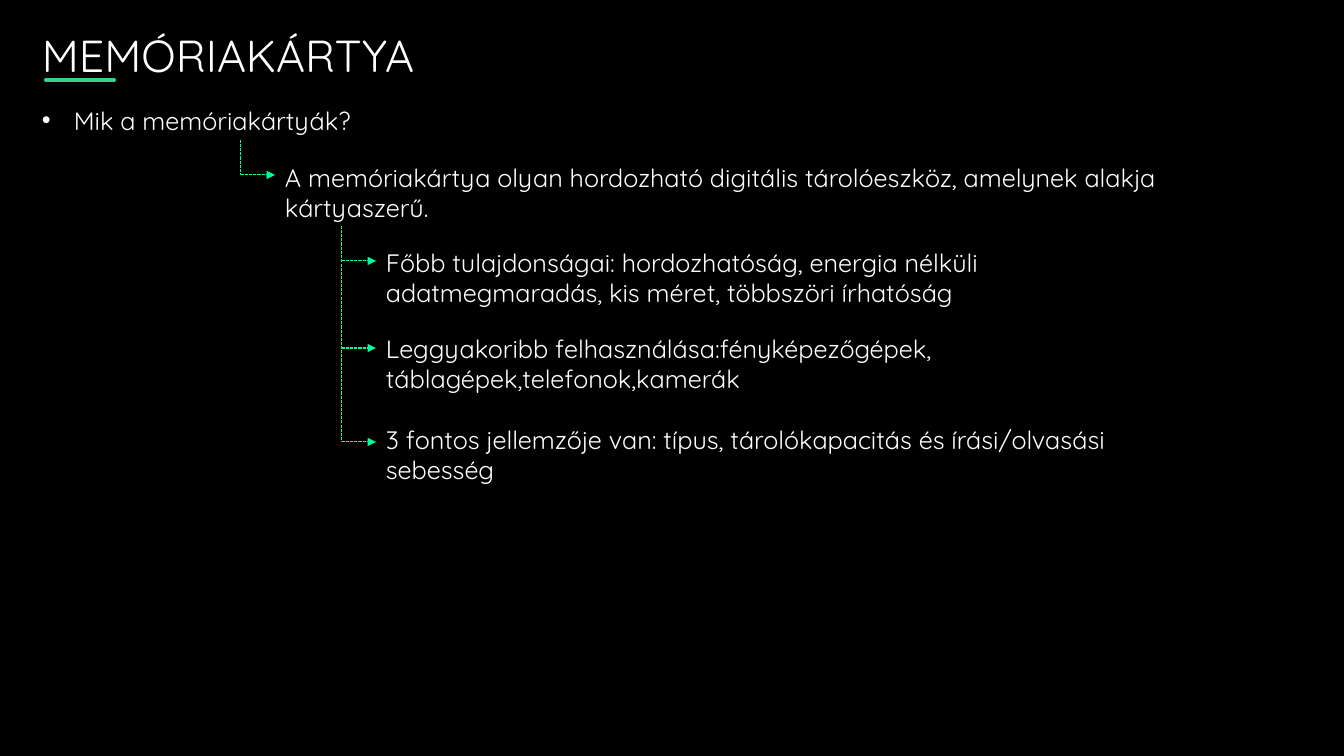
from dataclasses import dataclass

from pptx import Presentation
from pptx.dml.color import RGBColor as RGB
from pptx.enum.dml import MSO_LINE_DASH_STYLE as Dash
from pptx.enum.shapes import MSO_CONNECTOR as Connector
from pptx.enum.text import MSO_ANCHOR as Anchor, MSO_AUTO_SIZE as AutoSize
from pptx.oxml.ns import qn
from pptx.oxml.xmlchemy import OxmlElement as Element
from pptx.util import Pt

SLIDE_WIDTH, SLIDE_HEIGHT = 1344, 756
SCALE = 12192000 / SLIDE_WIDTH
ARROW_LENGTH = 34


@dataclass(frozen=True)
class Theme:
    """Colours, font and type sizes of the slide."""
    background: RGB = RGB(0, 0, 0)
    text: RGB = RGB(255, 255, 255)
    title_fade: RGB = RGB(0xA6, 0xA6, 0xA6)
    underline: RGB = RGB(0x37, 0xD1, 0x8B)
    branch: RGB = RGB(0x00, 0xFF, 0x99)
    font: str = "Quicksand"
    title_size: int = 32
    body_size: int = 18


THEME = Theme()


def px(length):
    """Turn a length in px into EMU."""
    return round(length * SCALE)


def add_text(slide, text, left, top, width, height, size=THEME.body_size,
             anchor=Anchor.TOP, fit=True, fade=None, bullet_indent=0):
    """Add a wrapped text box in the slide's font."""
    box = slide.shapes.add_textbox(px(left), px(top), px(width), px(height))
    frame = box.text_frame
    frame.word_wrap = True
    frame.auto_size = AutoSize.SHAPE_TO_FIT_TEXT if fit else AutoSize.NONE
    frame.vertical_anchor = anchor
    paragraph = frame.paragraphs[0]
    run = paragraph.add_run()
    run.text = text
    run.font.name = THEME.font
    run.font.size = Pt(size)
    if fade:
        run.font.fill.gradient()
        run.font.fill.gradient_angle = 267
        for stop, color in zip(run.font.fill.gradient_stops, (THEME.text, fade)):
            stop.color.rgb = color
    else:
        run.font.color.rgb = THEME.text
    if bullet_indent:
        properties = paragraph._p.get_or_add_pPr()
        properties.set("marL", str(px(bullet_indent)))
        properties.set("indent", str(-px(bullet_indent)))
        bullet_font = Element("a:buFont")
        bullet_font.set("typeface", "Arial")
        bullet = Element("a:buChar")
        bullet.set("char", "•")
        properties.extend([bullet_font, bullet])


def add_line(shapes, start, end, color, width, dash=None, cap="flat", arrow=False):
    """Add a straight line, dashed or with an arrowhead if asked."""
    line = shapes.add_connector(Connector.STRAIGHT, *map(px, (*start, *end)))
    line.line.color.rgb = color
    line.line.width = Pt(width)
    if dash:
        line.line.dash_style = dash
    properties = line._element.spPr
    stroke = properties.find(qn("a:ln"))
    stroke.set("cap", cap)
    if arrow:
        head = Element("a:tailEnd")
        head.set("type", "triangle")
        stroke.append(head)
    properties.append(Element("a:effectLst"))


def add_branch(slide, left, top, bottom):
    """Add a dashed stem that turns right into an arrow."""
    branch = slide.shapes.add_group_shape().shapes
    corner = (left, bottom)
    style = {"color": THEME.branch, "width": 0.75, "dash": Dash.SQUARE_DOT}
    add_line(branch, corner, (left + ARROW_LENGTH, bottom), arrow=True, **style)
    add_line(branch, (left, top), corner, **style)


def add_branch_text(slide, text, left, stem_top, arrow_y, text_top, width):
    """Add a branch and the two-line text it points to."""
    add_branch(slide, left, stem_top, arrow_y)
    add_text(slide, text, left + ARROW_LENGTH, text_top, width, 72)


def main():
    """Build the memory card slide and save it."""
    deck = Presentation()
    deck.slide_width, deck.slide_height = px(SLIDE_WIDTH), px(SLIDE_HEIGHT)
    slide = deck.slides.add_slide(deck.slide_layouts[6])
    slide.background.fill.solid()
    slide.background.fill.fore_color.rgb = THEME.background

    add_text(slide, "MEMÓRIAKÁRTYA", 32, -50, 1092, 210, size=THEME.title_size,
             anchor=Anchor.MIDDLE, fit=False, fade=THEME.title_fade)
    add_line(slide.shapes, (46, 80), (114, 80), THEME.underline, 3, cap="rnd")
    add_text(slide, "Mik a memóriakártyák?", 32, 100, 362, 40, bullet_indent=32)

    add_branch_text(
        slide,
        "A memóriakártya olyan hordozható digitális tárolóeszköz, "
        "amelynek alakja kártyaszerű.",
        241, 140, 175, 157, 1028)
    details = [
        ("Főbb tulajdonságai: hordozhatóság, energia nélküli "
         "adatmegmaradás, kis méret, többszöri írhatóság", 226, 261, 242),
        ("Leggyakoribb felhasználása:fényképezőgépek, "
         "táblagépek,telefonok,kamerák", 247, 348, 328),
        ("3 fontos jellemzője van: típus, tárolókapacitás és "
         "írási/olvasási sebesség", 342, 442, 419),
    ]
    for text, stem_top, arrow_y, text_top in details:
        add_branch_text(slide, text, 342, stem_top, arrow_y, text_top, 747)

    deck.save("out.pptx")


if __name__ == "__main__":
    main()
